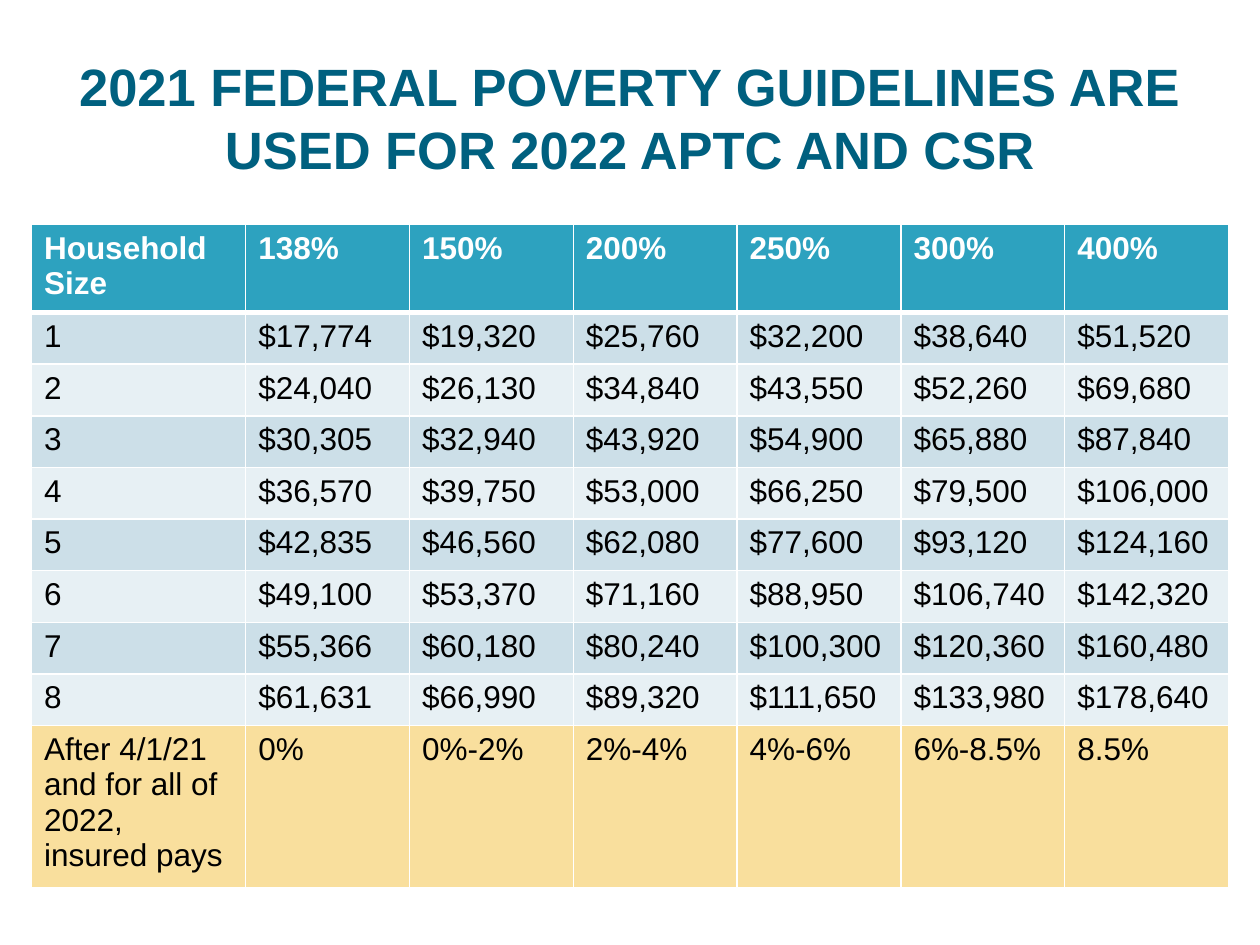
from pptx import Presentation
from pptx.dml.color import RGBColor
from pptx.enum.text import MSO_ANCHOR, PP_ALIGN
from pptx.oxml.ns import qn
from pptx.util import Inches, Pt
from lxml.etree import SubElement

# Content
TITLE = "2021 FEDERAL POVERTY GUIDELINES ARE USED FOR 2022 APTC AND CSR"
HEADER = ["Household Size", "138%", "150%", "200%", "250%", "300%", "400%"]
INCOMES = [
    ["1", "$17,774", "$19,320", "$25,760", "$32,200", "$38,640", "$51,520"],
    ["2", "$24,040", "$26,130", "$34,840", "$43,550", "$52,260", "$69,680"],
    ["3", "$30,305", "$32,940", "$43,920", "$54,900", "$65,880", "$87,840"],
    ["4", "$36,570", "$39,750", "$53,000", "$66,250", "$79,500", "$106,000"],
    ["5", "$42,835", "$46,560", "$62,080", "$77,600", "$93,120", "$124,160"],
    ["6", "$49,100", "$53,370", "$71,160", "$88,950", "$106,740", "$142,320"],
    ["7", "$55,366", "$60,180", "$80,240", "$100,300", "$120,360", "$160,480"],
    ["8", "$61,631", "$66,990", "$89,320", "$111,650", "$133,980", "$178,640"],
]
INSURED_PAYS = ["After 4/1/21 and for all of 2022, insured pays",
                "0%", "0%-2%", "2%-4%", "4%-6%", "6%-8.5%", "8.5%"]
COLORS = {"title": "00607F", "header": "2DA2BF", "odd": "CCDFE8",
          "even": "E7F0F4", "pays": "F9DF9D", "white": "FFFFFF", "text": "000000"}
COLUMN_WIDTHS = [1.7] + [1.3] * 6
ROW_HEIGHT = 0.41


def write(frame, text, size=18, color="text", bold=False, align=PP_ALIGN.LEFT):
    para = frame.paragraphs[0]
    para.alignment = align
    span = para.add_run()
    span.text = text
    span.font.name = "Arial"
    span.font.size = Pt(size)
    span.font.bold = bold
    span.font.color.rgb = RGBColor.from_string(COLORS[color])


def set_borders(cell, top=1, bottom=1):
    """Draw white cell borders; the lines must come before the fill."""
    properties = cell._tc.get_or_add_tcPr()
    for side, width in (("L", 1), ("R", 1), ("T", top), ("B", bottom)):
        line = SubElement(properties, qn(f"a:ln{side}"), w=str(Pt(width)))
        fill = SubElement(line, qn("a:solidFill"))
        SubElement(fill, qn("a:srgbClr"), val=COLORS["white"])


deck = Presentation()
deck.slide_width, deck.slide_height = Inches(10), Inches(7.5)
page = deck.slides.add_slide(deck.slide_layouts[6])

# Title
box = page.shapes.add_textbox(Inches(0.5), Inches(0.3), Inches(9), Inches(1.25))
box.text_frame.word_wrap = True
box.text_frame.vertical_anchor = MSO_ANCHOR.MIDDLE
write(box.text_frame, TITLE, size=30, color="title", bold=True, align=PP_ALIGN.CENTER)

# Guidelines table
rows = [HEADER, *INCOMES, INSURED_PAYS]
last = len(rows) - 1
holder = page.shapes.add_table(len(rows), len(HEADER), Inches(0.25), Inches(1.78),
                               Inches(sum(COLUMN_WIDTHS)), Inches(ROW_HEIGHT * len(rows)))
table = holder.table
for column, width in zip(table.columns, COLUMN_WIDTHS):
    column.width = Inches(width)

for r, values in enumerate(rows):
    table.rows[r].height = Inches(ROW_HEIGHT)
    is_header = r == 0
    band = "header" if is_header else "pays" if r == last else "odd" if r % 2 else "even"
    for c, value in enumerate(values):
        cell = table.cell(r, c)
        set_borders(cell, top=3 if r == 1 else 1, bottom=3 if r in (0, last) else 1)
        cell.fill.solid()
        cell.fill.fore_color.rgb = RGBColor.from_string(COLORS[band])
        write(cell.text_frame, value, color="white" if is_header else "text", bold=is_header)

# The header and last rows grow to fit their wrapped text
holder.height = Inches(5.24)

deck.save("out.pptx")
